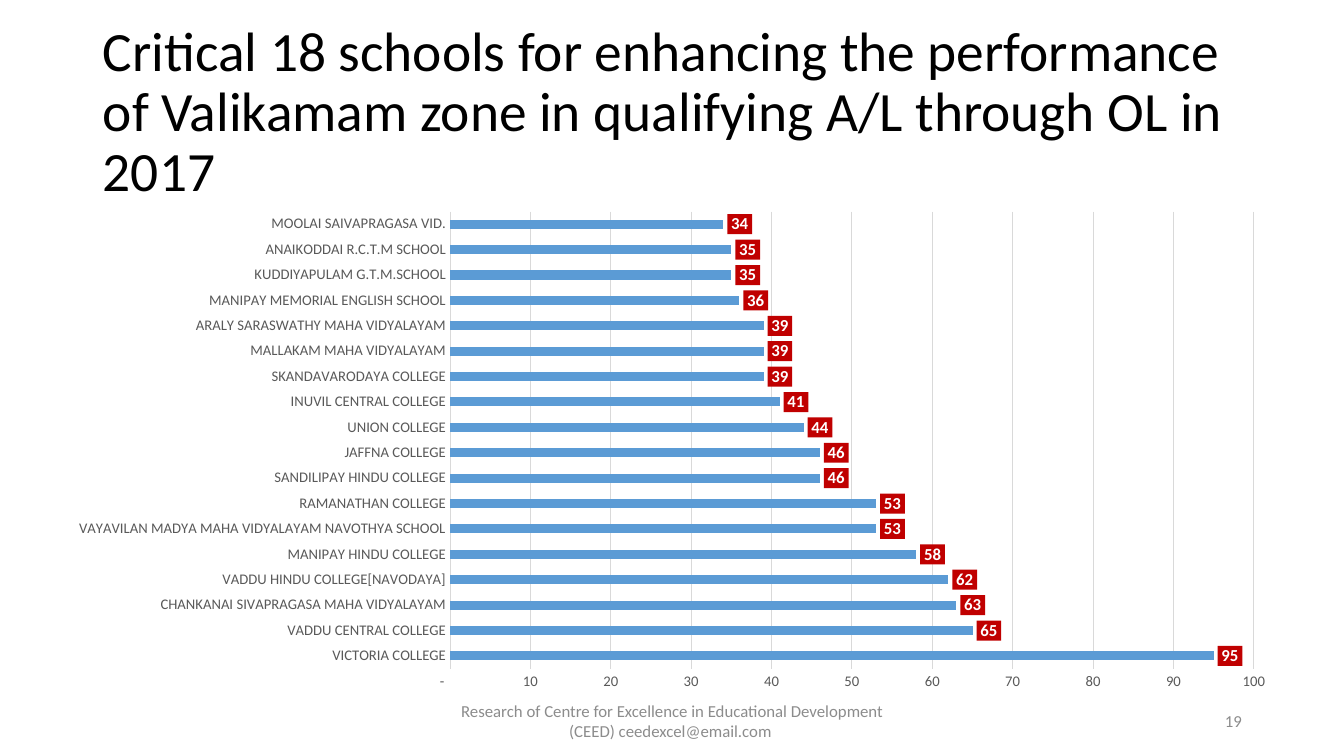
"""Build the slide on the 18 critical schools of Valikamam zone."""
from lxml.etree import SubElement, fromstring
from pptx import Presentation
from pptx.chart.data import CategoryChartData
from pptx.dml.color import RGBColor
from pptx.enum.chart import XL_CHART_TYPE as ChartType
from pptx.enum.chart import XL_LABEL_POSITION as LabelPosition
from pptx.enum.chart import XL_TICK_MARK as TickMark
from pptx.enum.text import MSO_ANCHOR as Anchor
from pptx.enum.text import PP_ALIGN as Align
from pptx.util import Cm, Pt

TITLE = ("Critical 18 schools for enhancing the performance of Valikamam zone "
         "in qualifying A/L through OL in 2017")
FOOTERS = [
    ("Research of Centre for Excellence in Educational Development (CEED) "
     "ceedexcel@email.com ", (11.23, 17.65, 11.43, 1.02), Align.CENTER),
    ("19", (23.93, 17.65, 7.62, 1.02), Align.RIGHT),
]
SCHOOLS = [
    ("VICTORIA COLLEGE", 95),
    ("VADDU CENTRAL COLLEGE", 65),
    ("CHANKANAI SIVAPRAGASA MAHA VIDYALAYAM", 63),
    ("VADDU HINDU COLLEGE[NAVODAYA]", 62),
    ("MANIPAY HINDU COLLEGE", 58),
    ("VAYAVILAN MADYA MAHA VIDYALAYAM NAVOTHYA SCHOOL", 53),
    ("RAMANATHAN COLLEGE", 53),
    ("SANDILIPAY HINDU COLLEGE", 46),
    ("JAFFNA COLLEGE", 46),
    ("UNION COLLEGE", 44),
    ("INUVIL CENTRAL COLLEGE", 41),
    ("SKANDAVARODAYA COLLEGE", 39),
    ("MALLAKAM MAHA VIDYALAYAM", 39),
    ("ARALY SARASWATHY MAHA VIDYALAYAM", 39),
    ("MANIPAY MEMORIAL ENGLISH SCHOOL", 36),
    ("KUDDIYAPULAM G.T.M.SCHOOL", 35),
    ("ANAIKODDAI R.C.T.M SCHOOL", 35),
    ("MOOLAI SAIVAPRAGASA VID.", 34),
]
TITLE_PLACE = (2.34, 1.02, 29.21, 3.68)
CHART_PLACE = (1.37, 5.08, 31.22, 12.57)
NUMBER_FORMAT = r'_(* #,##0_);_(* \(#,##0\);_(* "-"??_);_(@_)'
DRAWING = "http://schemas.openxmlformats.org/drawingml/2006/main"
CHARTING = "http://schemas.openxmlformats.org/drawingml/2006/chart"


def assign(target, values):
    for name, value in values.items():
        setattr(target, name, value)


def color(code):
    return RGBColor.from_string(code)


def lengths(place):
    return [Cm(value) for value in place]


def style_font(font, size, code, bold=False):
    assign(font, {"name": "Calibri", "size": Pt(size), "bold": bold})
    font.color.rgb = color(code)


def style_line(line, code):
    line.width = Pt(0.75)
    line.color.rgb = color(code)


def write(box, text, size, code, align, spacing=1.0):
    frame = box.text_frame
    assign(frame, {"word_wrap": True, "vertical_anchor": Anchor.MIDDLE})
    para = frame.paragraphs[0]
    assign(para, {"alignment": align, "line_spacing": spacing})
    span = para.add_run()
    span.text = text
    style_font(span.font, size, code)


def fill_labels(labels, code):
    number_format = labels._element.find(f"{{{CHARTING}}}numFmt")
    box = fromstring(f'<c:spPr xmlns:c="{CHARTING}" xmlns:a="{DRAWING}"/>')
    fill = SubElement(box, f"{{{DRAWING}}}solidFill")
    SubElement(fill, f"{{{DRAWING}}}srgbClr", val=code)
    number_format.addnext(box)


def add_school_chart(page):
    data = CategoryChartData()
    data.categories = [name for name, _ in SCHOOLS]
    data.add_series("Series 1", [value for _, value in SCHOOLS])
    chart = page.shapes.add_chart(
        ChartType.BAR_CLUSTERED, *lengths(CHART_PLACE), data).chart
    assign(chart, {"has_legend": False, "has_title": False})
    style_font(chart.font, 10.5, "000000")

    schools, scale = chart.category_axis, chart.value_axis
    for axis in (schools, scale):
        assign(axis, {"major_tick_mark": TickMark.NONE,
                      "minor_tick_mark": TickMark.NONE})
        style_font(axis.tick_labels.font, 10.5, "595959")
    style_line(schools.format.line, "D9D9D9")
    assign(scale, {"minimum_scale": 0, "maximum_scale": 100, "major_unit": 10,
                   "has_major_gridlines": True})
    scale.format.line.fill.background()
    style_line(scale.major_gridlines.format.line, "D9D9D9")

    plot = chart.plots[0]
    assign(plot, {"gap_width": 182, "vary_by_categories": False})
    series = plot.series[0]
    series.format.fill.solid()
    series.format.fill.fore_color.rgb = color("5B9BD5")
    labels = series.data_labels
    assign(labels, {"show_value": True, "position": LabelPosition.OUTSIDE_END})
    for numbers in (scale.tick_labels, labels):
        assign(numbers, {"number_format": NUMBER_FORMAT,
                         "number_format_is_linked": False})
    style_font(labels.font, 12, "FFFFFF", bold=True)
    fill_labels(labels, "C00000")


def main():
    deck = Presentation()
    assign(deck, {"slide_width": Cm(33.87), "slide_height": Cm(19.05)})
    page = deck.slides.add_slide(deck.slide_layouts[5])
    title = page.shapes.title
    assign(title, dict(zip(("left", "top", "width", "height"),
                           lengths(TITLE_PLACE))))
    write(title, TITLE, 39.6, "000000", Align.LEFT, 0.9)
    for text, place, align in FOOTERS:
        write(page.shapes.add_textbox(*lengths(place)), text, 12, "8C8C8C", align)
    add_school_chart(page)
    deck.save("out.pptx")


if __name__ == "__main__":
    main()
